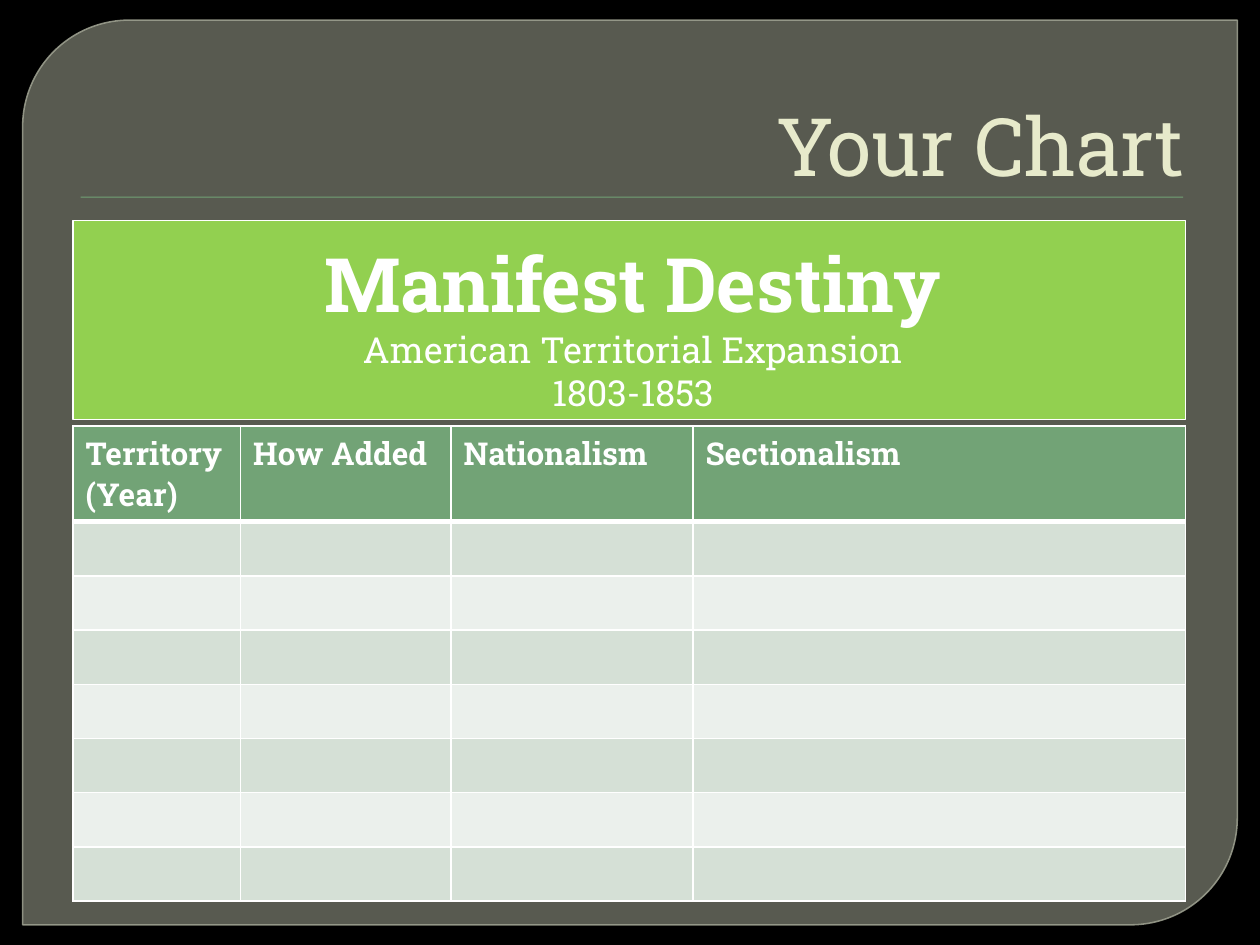
from pptx import Presentation
from pptx.dml.color import RGBColor
from pptx.enum.shapes import MSO_SHAPE
from pptx.enum.text import MSO_ANCHOR, MSO_AUTO_SIZE, PP_ALIGN
from pptx.oxml.ns import qn
from pptx.util import Inches, Pt
from lxml.etree import SubElement

TITLE = "Your Chart"
BANNER = [
    ("Manifest Destiny", "banner", True),
    ("American Territorial Expansion", "subtitle", False),
    ("1803-1853", "subtitle", False),
]
COLUMNS = [
    ("Territory (Year)", 1.33),
    ("How Added", 1.67),
    ("Nationalism", 1.92),
    ("Sectionalism", 3.91),
]
EMPTY_ROWS = 7
HEADER_HEIGHT, ROW_HEIGHT = 0.75, 0.43
LEFT, WIDTH = 0.58, 8.83

THEME = {
    "font": "Roboto Slab",
    "size": {"title": 46, "banner": 42.9, "subtitle": 20.5, "header": 18},
    "color": {
        "back": "000000", "panel": "888B7B", "edge": "9DA090",
        "title": "E7EACB", "accent": "72A376", "banner": "92D050",
        "white": "FFFFFF", "odd": "D5E0D6", "even": "EBF0EC",
    },
}


def paint(fill, color, alpha=None):
    fill.solid()
    fill.fore_color.rgb = RGBColor.from_string(THEME["color"][color])
    if alpha:
        clr = fill._xPr.find(qn("a:solidFill"))[0]
        SubElement(clr, qn("a:alpha"), val=str(alpha * 1000))


def write(p, text, size, color="white", bold=False, align=None):
    if align is not None:
        p.alignment = align
    r = p.add_run()
    r.text = text
    r.font.name = THEME["font"]
    r.font.size = Pt(THEME["size"][size])
    r.font.bold = bold
    r.font.color.rgb = RGBColor.from_string(THEME["color"][color])


def add_box(slide, kind, box, color, alpha=None, edge=None, width=0.75, edge_alpha=None):
    sp = slide.shapes.add_shape(kind, *map(Inches, box))
    sp.shadow.inherit = False
    paint(sp.fill, color, alpha)
    if edge:
        paint(sp.line.fill, edge, edge_alpha)
        sp.line.width = Pt(width)
    else:
        sp.line.fill.background()
    return sp


def set_borders(cell, bottom=1, top=1):
    tcPr = cell._tc.get_or_add_tcPr()
    sides = [("a:lnL", 1), ("a:lnR", 1), ("a:lnT", top), ("a:lnB", bottom)]
    for i, (tag, width) in enumerate(sides):
        ln = SubElement(tcPr, qn(tag), w=str(Pt(width)))
        fill = SubElement(ln, qn("a:solidFill"))
        SubElement(fill, qn("a:srgbClr"), val=THEME["color"]["white"])
        tcPr.insert(i, ln)


def add_title(slide):
    sp = slide.shapes.title
    sp.left, sp.top, sp.width, sp.height = map(Inches, (0.5, 0.28, 9, 1.25))
    tf = sp.text_frame
    tf.auto_size = MSO_AUTO_SIZE.NONE
    tf.vertical_anchor = MSO_ANCHOR.BOTTOM
    tf.margin_bottom = 0
    write(tf.paragraphs[0], TITLE, "title", color="title", align=PP_ALIGN.RIGHT)


def add_banner(slide):
    sp = add_box(slide, MSO_SHAPE.RECTANGLE, (LEFT, 1.75, WIDTH, 1.58), "banner", edge="white")
    tf = sp.text_frame
    tf.word_wrap = True
    tf.vertical_anchor = MSO_ANCHOR.BOTTOM
    p = tf.paragraphs[0]
    p._p.get_or_add_pPr().set("marL", str(Inches(0.06)))
    for i, (text, size, bold) in enumerate(BANNER):
        if i:
            p.add_line_break()
        write(p, text, size, bold=bold, align=PP_ALIGN.CENTER)


def add_grid(slide):
    heights = [HEADER_HEIGHT] + [ROW_HEIGHT] * EMPTY_ROWS
    table = slide.shapes.add_table(
        len(heights), len(COLUMNS), Inches(LEFT), Inches(3.38),
        Inches(WIDTH), Inches(sum(heights))).table
    for row, height in zip(table.rows, heights):
        row.height = Inches(height)
    for c, (label, width) in enumerate(COLUMNS):
        table.columns[c].width = Inches(width)
        for r in range(len(heights)):
            cell = table.cell(r, c)
            paint(cell.fill, "accent" if r == 0 else "odd" if r % 2 else "even")
            set_borders(cell, bottom=3 if r == 0 else 1, top=3 if r == 1 else 1)
        write(table.cell(0, c).text_frame.paragraphs[0], label, "header", bold=True)


def main():
    prs = Presentation()
    prs.slide_width, prs.slide_height = Inches(10), Inches(7.5)
    slide = prs.slides.add_slide(prs.slide_layouts[5])
    paint(slide.background.fill, "back")
    panel = add_box(slide, MSO_SHAPE.ROUND_2_DIAG_RECTANGLE, (0.18, 0.16, 9.64, 7.18),
                    "panel", alpha=65, edge="edge", width=0.87, edge_alpha=88)
    panel.adjustments[0] = 0.118
    panel.adjustments[1] = 0
    rule = add_box(slide, MSO_SHAPE.RECTANGLE, (0.64, 1.56, 8.75, 0.01), "accent")
    title = slide.shapes.title
    rule._element.addnext(title._element)
    add_title(slide)
    add_grid(slide)
    add_banner(slide)
    prs.save("out.pptx")


if __name__ == "__main__":
    main()
